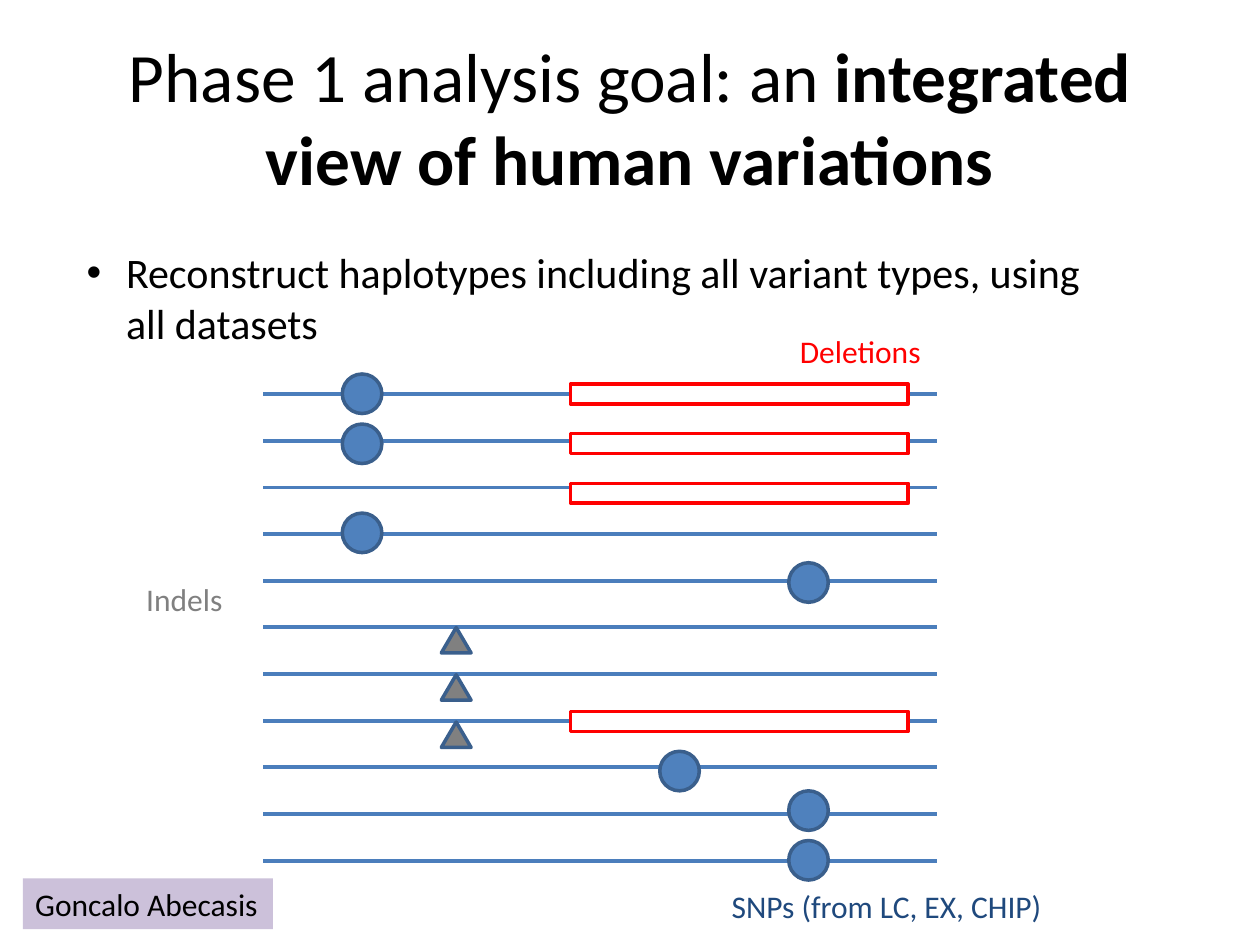
from dataclasses import dataclass

from lxml.etree import SubElement
from pptx import Presentation
from pptx.dml.color import RGBColor
from pptx.enum.shapes import MSO_CONNECTOR, MSO_SHAPE
from pptx.enum.text import MSO_ANCHOR, PP_ALIGN
from pptx.oxml.ns import qn
from pptx.util import Pt


@dataclass(frozen=True)
class Theme:
    font: str = "Calibri"
    black: str = "000000"
    white: str = "FFFFFF"
    haplotype: str = "4B7EBC"
    snp: str = "4F81BD"
    indel: str = "808080"
    deletion: str = "FF0000"
    outline: str = "3A5F8C"
    snp_label: str = "1F497D"
    author_fill: str = "CCC1DA"
    title_size: float = 39.6
    body_size: float = 24
    label_size: float = 18
    line_width: float = 2.25
    outline_width: float = 2


class SlideBuilder:
    def __init__(self, slide, theme):
        self.s = slide
        self.theme = theme

    def line(self, x1, x2, y):
        c = self.s.shapes.add_connector(
            MSO_CONNECTOR.STRAIGHT, Pt(x1), Pt(y), Pt(x2), Pt(y))
        c.line.color.rgb = RGBColor.from_string(self.theme.haplotype)
        c.line.width = Pt(self.theme.line_width)
        SubElement(c._element.spPr, qn("a:effectLst"))

    def marker(self, kind, x, y, w, h, fill, outline):
        sp = self.s.shapes.add_shape(kind, Pt(x), Pt(y), Pt(w), Pt(h))
        sp.shadow.inherit = False
        sp.fill.solid()
        sp.fill.fore_color.rgb = RGBColor.from_string(fill)
        sp.line.color.rgb = RGBColor.from_string(outline)
        sp.line.width = Pt(self.theme.outline_width)

    def text(self, x, y, w, h, runs, size, color, wrap=True, fill=None):
        """Add a text box from (text, bold) runs and return its text frame."""
        sp = self.s.shapes.add_textbox(Pt(x), Pt(y), Pt(w), Pt(h))
        if fill:
            sp.fill.solid()
            sp.fill.fore_color.rgb = RGBColor.from_string(fill)
        tf = sp.text_frame
        tf.word_wrap = wrap
        for text, bold in runs:
            r = tf.paragraphs[0].add_run()
            r.text = text
            r.font.name = self.theme.font
            r.font.size = Pt(size)
            r.font.bold = bold
            r.font.color.rgb = RGBColor.from_string(color)
        return tf

    def title(self, x, y, w, h, runs):
        tf = self.text(x, y, w, h, runs, self.theme.title_size, self.theme.black)
        tf.vertical_anchor = MSO_ANCHOR.MIDDLE
        tf.paragraphs[0].alignment = PP_ALIGN.CENTER

    def bullet(self, x, y, w, h, text, indent):
        tf = self.text(x, y, w, h, [(text, False)],
                       self.theme.body_size, self.theme.black)
        pPr = tf.paragraphs[0]._p.get_or_add_pPr()
        pPr.set("marL", str(Pt(indent)))
        pPr.set("indent", str(-Pt(indent)))
        SubElement(pPr, qn("a:buFont"), typeface="Arial")
        SubElement(pPr, qn("a:buChar"), char="•")

    def label(self, x, y, w, text, color, fill=None):
        self.text(x, y, w, 29, [(text, False)], self.theme.label_size,
                  color, wrap=False, fill=fill)


def main():
    prs = Presentation()
    prs.slide_width, prs.slide_height = Pt(720), Pt(540)
    theme = Theme()
    b = SlideBuilder(prs.slides.add_slide(prs.slide_layouts[6]), theme)

    for row in range(11):
        b.line(150.5, 535.7, 225.3 + 26.65 * row)

    snps = [(195.6, (213.7, 242.3, 293.2)),
            (450.7, (321.6, 451.9, 480.3)),
            (377, (429.3,))]
    for x, tops in snps:
        for y in tops:
            b.marker(MSO_SHAPE.OVAL, x, y, 22.6, 22.6, theme.snp, theme.outline)
    for row in range(3):
        b.marker(MSO_SHAPE.ISOSCELES_TRIANGLE, 252.2, 358.6 + 27 * row, 17, 14.5,
                 theme.indel, theme.outline)
    for y in (219.5, 247.8, 276.2, 406.6):
        b.marker(MSO_SHAPE.RECTANGLE, 326, y, 193, 11.4,
                 theme.white, theme.deletion)

    b.label(450, 186, 84, "Deletions", theme.deletion)
    b.label(411, 503.5, 202.5, "SNPs (from LC, EX, CHIP)", theme.snp_label)
    b.label(76.5, 327.8, 58, "Indels", theme.indel)
    b.label(13, 502, 143, "Goncalo Abecasis", theme.black, theme.author_fill)

    b.title(36, 21.6, 648, 90, [("Phase 1 analysis goal: an ", False),
                                ("integrated view of human variations", True)])
    b.bullet(42.5, 137.5, 606, 65.5, "Reconstruct haplotypes including all "
             "variant types, using all datasets", 22.5)
    prs.save("out.pptx")


if __name__ == "__main__":
    main()
